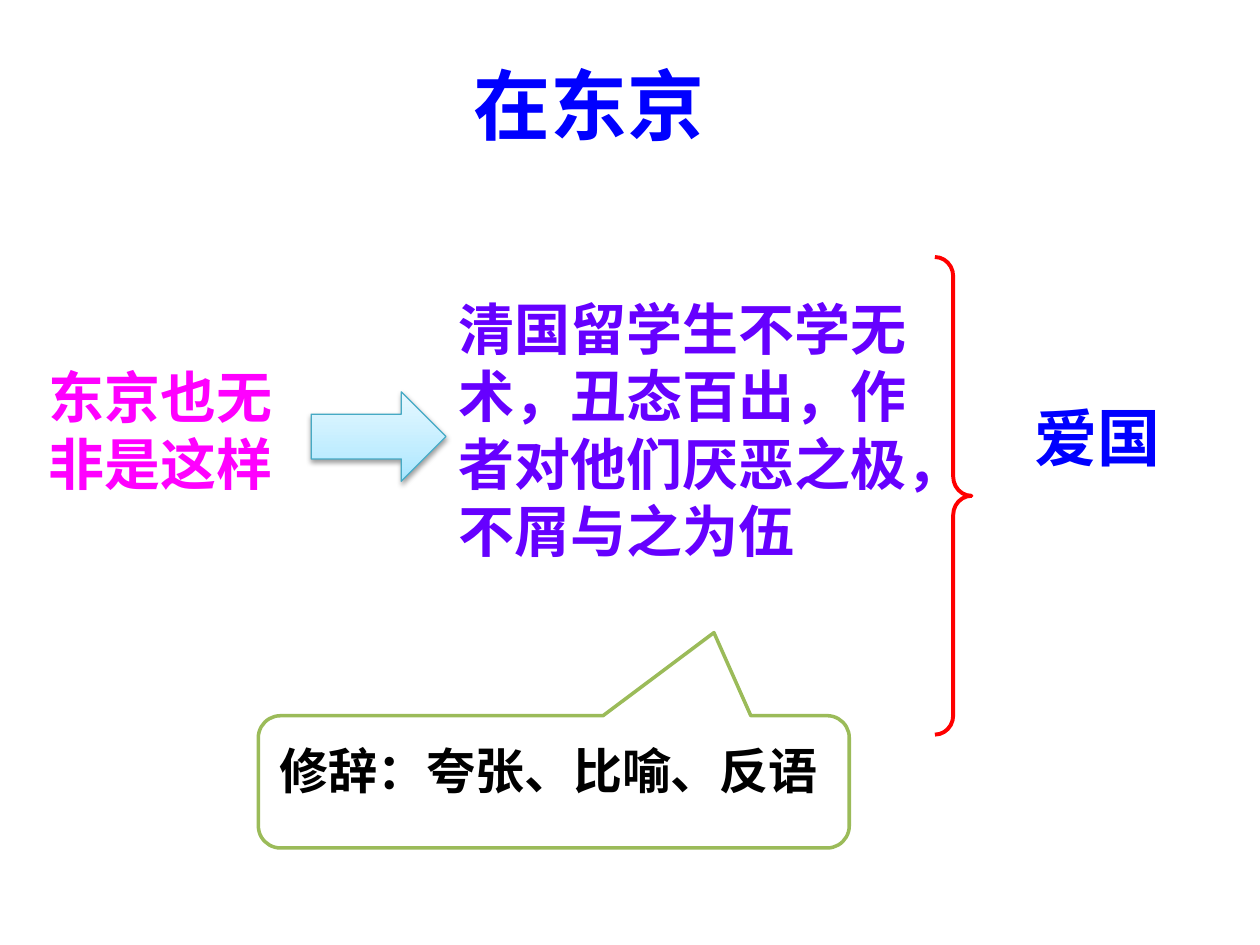
from copy import deepcopy
from lxml.etree import SubElement
from pptx import Presentation
from pptx.dml.color import RGBColor as RGB
from pptx.enum.shapes import MSO_SHAPE as SHAPE
from pptx.enum.text import PP_ALIGN as ALIGN
from pptx.oxml import parse_xml
from pptx.oxml.ns import nsdecls, qn
from pptx.util import Inches, Pt

THEME = {
    "blue": "0000FF", "magenta": "FF00FF", "violet": "6600FF",
    "black": "000000", "white": "FFFFFF", "red": "FF0000",
    "green": "9BBB59", "teal": "46AAC5",
    "arrow_stops": [(0, "A7E6FF"), (0.35, "C1EDFF"), (1, "E7F8FF")],
    "title": 44, "theme_word": 36, "body": 32, "device": 28,
    "latin": "Arial", "chinese": "Noto Sans CJK SC",
}

# Grid of 100 columns by 75 rows
COLUMNS, ROWS = 100, 75
deck = Presentation()
deck.slide_width, deck.slide_height = Inches(10), Inches(7.5)
COL, ROW = deck.slide_width / COLUMNS, deck.slide_height / ROWS
slide = deck.slides.add_slide(deck.slide_layouts[6])


def add_text(parent, cell, words, size, color, font, align=ALIGN.LEFT):
    col, row, cols, rows = cell
    box = parent.add_textbox(int(col * COL), int(row * ROW), int(cols * COL), int(rows * ROW))
    box.text_frame.word_wrap = True
    line = box.text_frame.paragraphs[0]
    line.text, line.alignment = words, align
    line.font.size, line.font.bold = Pt(THEME[size]), True
    line.font.name = THEME[font]
    line.font.color.rgb = RGB.from_string(THEME[color])
    # Chinese glyphs take the East Asian typeface
    run_style = line.runs[0].font
    run_style.name = THEME[font]
    SubElement(run_style._element, qn("a:ea"), typeface=THEME["chinese"])


def add_outline(parent, kind, cell, color, weight, adjustments=(), turn=0):
    col, row, cols, rows = cell
    shape = parent.add_shape(kind, int(col * COL), int(row * ROW), int(cols * COL), int(rows * ROW))
    shape.shadow.inherit = False
    shape.rotation = turn
    shape.line.color.rgb = RGB.from_string(THEME[color])
    shape.line.width = Pt(weight)
    for index, value in enumerate(adjustments):
        shape.adjustments[index] = value
    return shape


# Title, quotation, reading and theme
for cell, words, size, color, font, align in [
    ((19.3, 4.1, 54.9, 8.4), "在东京", "title", "blue", "latin", ALIGN.CENTER),
    ((2.9, 28.3, 21.8, 11.8), "东京也无非是这样", "body", "magenta", "chinese", ALIGN.LEFT),
    ((35.4, 22.9, 38, 22.6), "清国留学生不学无术，丑态百出，作者对他们厌恶之极，不屑与之为伍",
     "body", "violet", "chinese", ALIGN.LEFT),
    ((81.1, 31.1, 13.9, 7.1), "爱国", "theme_word", "blue", "latin", ALIGN.LEFT),
]:
    add_text(slide.shapes, cell, words, size, color, font, align)

# Arrow from quotation to reading, with gradient and soft shadow
arrow = add_outline(slide.shapes, SHAPE.RIGHT_ARROW, (24.7, 31.1, 10.7, 7.1), "teal", 0.75)
arrow.fill.gradient()
arrow.fill.gradient_angle = 90
stop_list = arrow._element.spPr.find(qn("a:gradFill")).find(qn("a:gsLst"))
stop_list.append(deepcopy(stop_list[-1]))
for stop, stop_xml, (place, tint) in zip(arrow.fill.gradient_stops, stop_list, THEME["arrow_stops"]):
    stop.position = place
    stop.color.rgb = RGB.from_string(tint)
arrow._element.spPr.find(qn("a:effectLst")).append(parse_xml(
    f'<a:outerShdw {nsdecls("a")} blurRad="{Pt(3.1)}" dist="{Pt(1.6)}" dir="5400000" rotWithShape="0">'
    f'<a:srgbClr val="{THEME["black"]}"><a:alpha val="38000"/></a:srgbClr></a:outerShdw>'))

# Callout naming the rhetorical devices
devices = slide.shapes.add_group_shape().shapes
callout = add_outline(devices, SHAPE.ROUNDED_RECTANGULAR_CALLOUT, (20.5, 56.8, 46.9, 10.5),
                      "green", 2, (-0.271, 1.128, 0.167), 180)
callout.fill.solid()
callout.fill.fore_color.rgb = RGB.from_string(THEME["white"])
add_text(devices, (21.2, 58.3, 46.1, 5.7), "修辞：夸张、比喻、反语", "device", "black", "latin")

# Brace leading to the theme
brace = add_outline(slide.shapes, SHAPE.LEFT_BRACE, (74.2, 20.4, 2.9, 37.9),
                    "red", 2.25, (0.525, 0.5), 180)
brace.fill.background()

deck.save("out.pptx")
